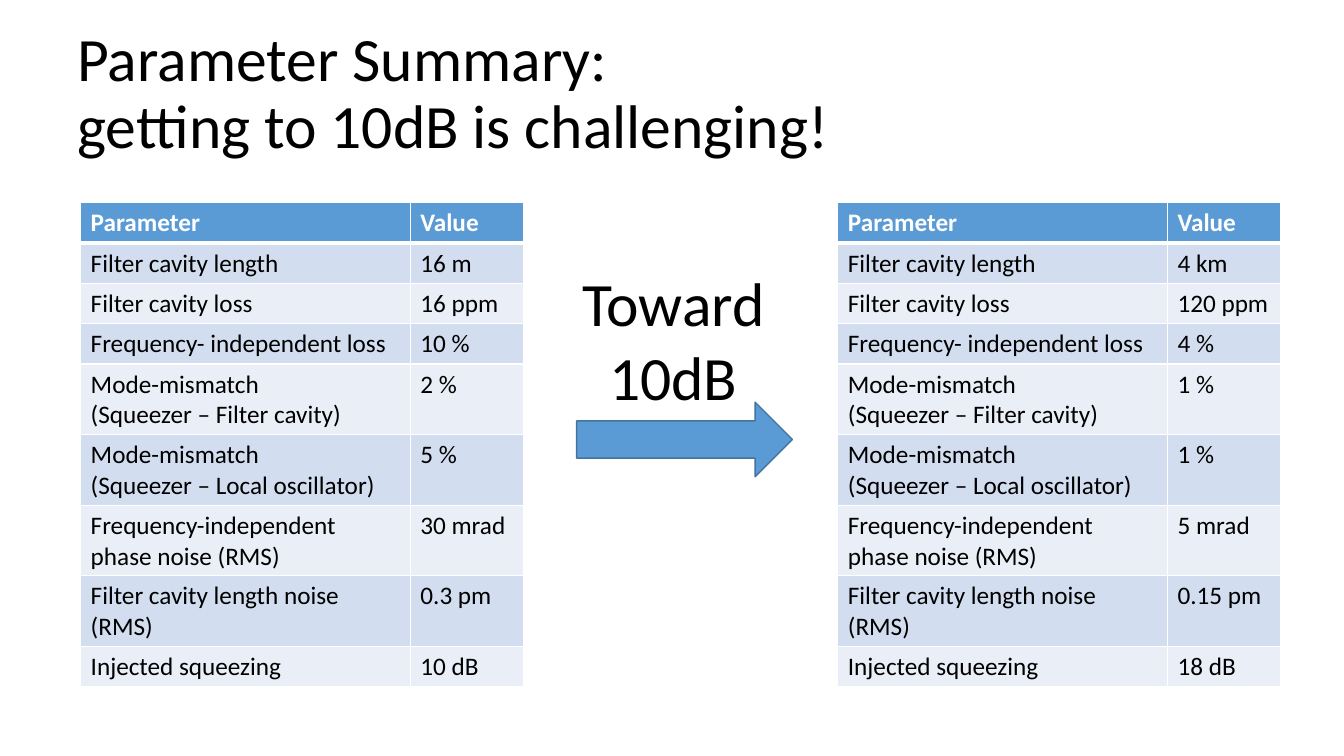
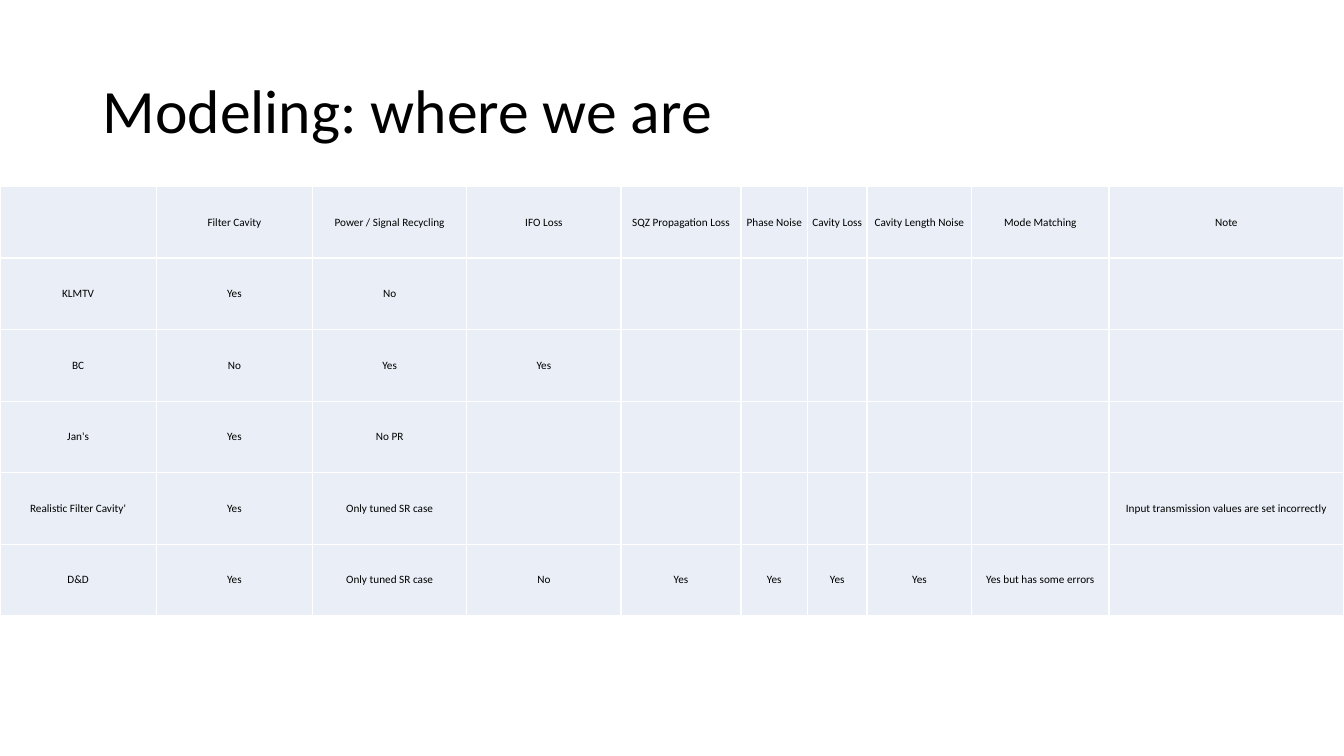
from dataclasses import dataclass

from lxml import etree
from pptx import Presentation
from pptx.dml.color import RGBColor
from pptx.enum.shapes import MSO_SHAPE
from pptx.enum.text import MSO_ANCHOR, PP_ALIGN
from pptx.oxml.ns import qn
from pptx.util import Inches, Pt

RIGHT_ARROW = MSO_SHAPE.RIGHT_ARROW
MIDDLE, TOP = MSO_ANCHOR.MIDDLE, MSO_ANCHOR.TOP
LEFT, CENTER = PP_ALIGN.LEFT, PP_ALIGN.CENTER


@dataclass(frozen=True)
class Theme:
    font: str = "Calibri"
    text: str = "000000"
    white: str = "FFFFFF"
    accent: str = "5B9BD5"
    accent_line: str = "43739E"
    band_dark: str = "D2DEEF"
    band_light: str = "EAEFF7"
    title_size: int = 44
    table_size: int = 18
    small_size: int = 8
    border: int = 1
    header_border: int = 3


THEME = Theme()

SUMMARY_TITLE = "Parameter Summary:\vgetting to 10dB is challenging!"
SUMMARY_HEADER = ("Parameter", "Value")
PARAMETERS = [
    ("Filter cavity length", 1, "16 m", "4 km"),
    ("Filter cavity loss", 1, "16 ppm", "120 ppm"),
    ("Frequency- independent loss", 1, "10 %", "4 %"),
    ("Mode-mismatch\n(Squeezer – Filter cavity)", 2, "2 %", "1 %"),
    ("Mode-mismatch\n(Squeezer – Local oscillator)", 2, "5 %", "1 %"),
    ("Frequency-independent\nphase noise (RMS)", 2, "30 mrad", "5 mrad"),
    ("Filter cavity length noise (RMS)", 2, "0.3 pm", "0.15 pm"),
    ("Injected squeezing", 1, "10 dB", "18 dB"),
]
SUMMARY_LEFTS = (0.8, 8.31)
SUMMARY_WIDTHS = (3.27, 1.12)
ROW_HEIGHTS = {1: 0.4, 2: 0.7}
ARROW_LABEL = "Toward 10dB"

MODEL_TITLE = "Modeling: where we are"
MODEL_COLUMNS = [
    ("", 1.55), ("Filter Cavity", 1.55), ("Power / Signal Recycling", 1.53),
    ("IFO Loss", 1.53), ("SQZ Propagation Loss", 1.19), ("Phase Noise", 0.66),
    ("Cavity Loss", 0.59), ("Cavity Length Noise", 1.04),
    ("Mode Matching", 1.36), ("Note", 2.33),
]
MODELS = [
    ("KLMTV", "Yes", "No", "", "", "", "", "", "", ""),
    ("BC", "No", "Yes", "Yes", "", "", "", "", "", ""),
    ("Jan's", "Yes", "No PR", "", "", "", "", "", "", ""),
    ("Realistic Filter Cavity'", "Yes", "Only tuned SR case", "", "", "", "", "", "",
     "Input transmission values are set incorrectly"),
    ("D&D", "Yes", "Only tuned SR case", "No", "Yes", "Yes", "Yes", "Yes",
     "Yes but has some errors", ""),
]
MODEL_ROW_HEIGHT = 0.71


def rgb(color):
    return RGBColor.from_string(color)


def write_text(text_frame, text, size, color=THEME.text, bold=False, align=LEFT, spacing=None):
    text_frame.text = text
    for paragraph in text_frame.paragraphs:
        paragraph.alignment = align
        paragraph.line_spacing = spacing
        font = paragraph.font
        font.name, font.size, font.bold = THEME.font, Pt(size), bold
        font.color.rgb = rgb(color)


def add_text(slide, text, left, top, width, height, anchor=TOP, **style):
    box = slide.shapes.add_textbox(Inches(left), Inches(top), Inches(width), Inches(height))
    box.text_frame.word_wrap = True
    box.text_frame.vertical_anchor = anchor
    write_text(box.text_frame, text, THEME.title_size, **style)


def add_title(slide, text, left, top):
    add_text(slide, text, left, top, 11.5, 1.45, anchor=MIDDLE, spacing=0.9)


def set_borders(cell, top, bottom):
    properties = cell._tc.get_or_add_tcPr()
    sides = {"lnL": THEME.border, "lnR": THEME.border, "lnT": top, "lnB": bottom}
    for side, width in sides.items():
        line = etree.SubElement(properties, qn(f"a:{side}"), w=str(Pt(width)))
        fill = etree.SubElement(line, qn("a:solidFill"))
        etree.SubElement(fill, qn("a:srgbClr"), val=THEME.white)


def add_table(slide, rows, left, top, widths, heights, size, header=False, centered=False):
    frame = slide.shapes.add_table(len(rows), len(widths), Inches(left), Inches(top),
                                   Inches(sum(widths)), Inches(sum(heights)))
    table = frame.table
    table.first_row = table.horz_banding = False
    for column, width in zip(table.columns, widths):
        column.width = Inches(width)
    for index, (values, height) in enumerate(zip(rows, heights)):
        table.rows[index].height = Inches(height)
        is_header = header and index == 0
        if is_header:
            fill = THEME.accent
        else:
            fill = THEME.band_dark if header and index % 2 else THEME.band_light
        top_border = THEME.header_border if header and index == 1 else THEME.border
        bottom_border = THEME.header_border if is_header else THEME.border
        for cell, value in zip(table.rows[index].cells, values):
            set_borders(cell, top_border, bottom_border)
            cell.fill.solid()
            cell.fill.fore_color.rgb = rgb(fill)
            if centered:
                cell.margin_left = cell.margin_right = cell.margin_top = cell.margin_bottom = 0
                cell.vertical_anchor = MIDDLE
            write_text(cell.text_frame, value, size, THEME.white if is_header else THEME.text,
                       bold=is_header, align=CENTER if centered else LEFT)


def add_arrow(slide, left, top, width, height):
    arrow = slide.shapes.add_shape(RIGHT_ARROW, Inches(left), Inches(top),
                                   Inches(width), Inches(height))
    arrow.shadow.inherit = False
    arrow.fill.solid()
    arrow.fill.fore_color.rgb = rgb(THEME.accent)
    arrow.line.color.rgb = rgb(THEME.accent_line)
    arrow.line.width = Pt(1)


def build_summary(slide):
    add_title(slide, SUMMARY_TITLE, 0.67, 0.22)
    add_arrow(slide, 5.72, 3.99, 2.14, 0.74)
    add_text(slide, ARROW_LABEL, 5.6, 2.58, 2.16, 1.58, align=CENTER)
    heights = [ROW_HEIGHTS[1]] + [ROW_HEIGHTS[lines] for _, lines, *_ in PARAMETERS]
    for index, left in enumerate(SUMMARY_LEFTS):
        rows = [SUMMARY_HEADER] + [(name, values[index]) for name, _, *values in PARAMETERS]
        add_table(slide, rows, left, 2.01, SUMMARY_WIDTHS, heights, THEME.table_size, header=True)


def build_models(slide):
    add_title(slide, MODEL_TITLE, 0.92, 0.4)
    names, widths = zip(*MODEL_COLUMNS)
    rows = [names] + MODELS
    add_table(slide, rows, 0, 1.85, widths, [MODEL_ROW_HEIGHT] * len(rows),
              THEME.small_size, centered=True)


def main():
    presentation = Presentation()
    presentation.slide_width, presentation.slide_height = Inches(13.33), Inches(7.5)
    blank = presentation.slide_layouts[6]
    for build in (build_summary, build_models):
        build(presentation.slides.add_slide(blank))
    presentation.save("out.pptx")


if __name__ == "__main__":
    main()
